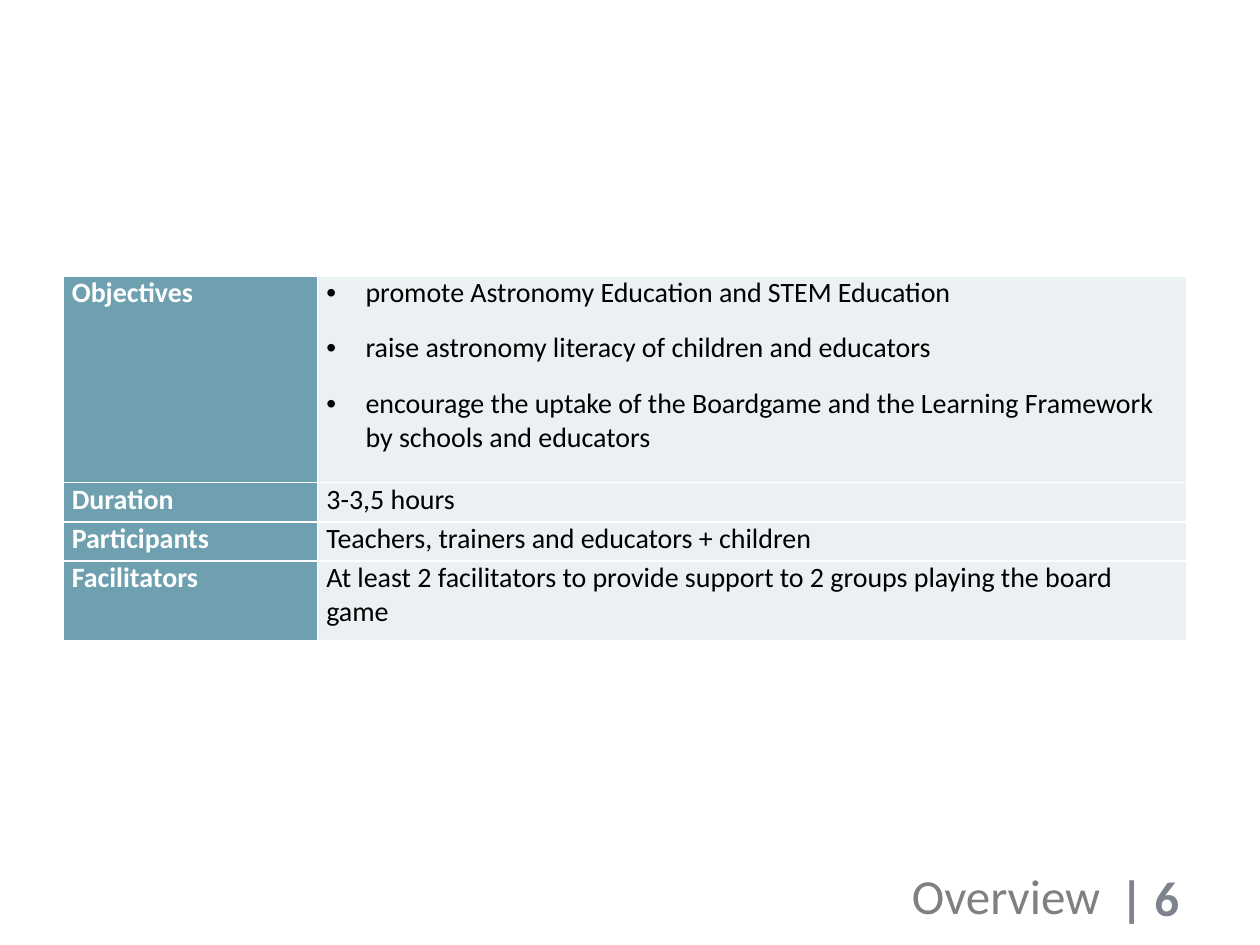
from lxml import etree
from pptx import Presentation, util as u
from pptx.dml.color import RGBColor
from pptx.enum import text
from pptx.oxml.ns import qn

WHITE = RGBColor(0xFF, 0xFF, 0xFF)
BLACK = RGBColor(0, 0, 0)
TEAL = RGBColor(0x6E, 0xA0, 0xB0)
PALE = RGBColor(0xEB, 0xF0, 0xF2)
GREY = RGBColor(0x80, 0x80, 0x80)
SLATE = RGBColor(0x7E, 0x84, 0x8D)

# label, lines, bulleted, row height in cm
ROWS = [
    ("Objectives", ["promote Astronomy Education and STEM Education",
                    "raise astronomy literacy of children and educators",
                    "encourage the uptake of the Boardgame and the Learning "
                    "Framework by schools and educators"], True, 4.17),
    ("Duration", ["3-3,5 hours"], False, 0.79),
    ("Participants", ["Teachers, trainers and educators + children"], False, 0.79),
    ("Facilitators", ["At least 2 facilitators to provide support to 2 groups "
                      "playing the board game"], False, 1.6),
]
COLS = [5.13, 17.53]
LEFT, TOP = 1.27, 5.56
INDENT = 0.79

# words, box in cm, alignment, wrap, format
FOOTER = [
    ("| 6", (22.33, 17.37, 2.87, 1.45), text.PP_ALIGN.LEFT, False,
     {"bold": True, "color": SLATE}),
    ("Overview", (0.84, 17.32, 21.59, 1.45), text.PP_ALIGN.RIGHT, True,
     {"bold": False, "color": GREY}),
]


def add_run(p, words, size, bold, color):
    r = p.add_run()
    r.text = words
    for name, value in {"name": "Calibri", "size": u.Pt(size), "bold": bold}.items():
        setattr(r.font, name, value)
    r.font.color.rgb = color


def add_bullet(p):
    pPr = p._p.get_or_add_pPr()
    pPr.set("marL", str(u.Cm(INDENT)))
    pPr.set("indent", str(-u.Cm(INDENT)))
    etree.SubElement(pPr, qn("a:buFont"), typeface="Arial")
    etree.SubElement(pPr, qn("a:buChar"), char="•")


def add_borders(cell):
    tcPr = cell._tc.get_or_add_tcPr()
    for side in "LRTB":
        ln = etree.SubElement(tcPr, qn(f"a:ln{side}"), w=str(u.Pt(1)))
        fill = etree.SubElement(ln, qn("a:solidFill"))
        etree.SubElement(fill, qn("a:srgbClr"), val=str(WHITE))


def fill_cell(cell, lines, bulleted, bold, color, back):
    margins = {"margin_left": u.Cm(0.18), "margin_right": u.Cm(0.18),
               "margin_top": 0, "margin_bottom": 0}
    for name, value in margins.items():
        setattr(cell, name, value)
    add_borders(cell)
    cell.fill.solid()
    cell.fill.fore_color.rgb = back
    tf = cell.text_frame
    for i, line in enumerate(lines):
        p = tf.add_paragraph() if i else tf.paragraphs[0]
        p.space_before = p.space_after = u.Pt(6)
        if bulleted:
            add_bullet(p)
        add_run(p, line, 16, bold, color)


def main():
    prs = Presentation()
    prs.slide_width, prs.slide_height = u.Cm(25.4), u.Cm(19.05)
    s = prs.slides.add_slide(prs.slide_layouts[6])

    for words, box, align, wrap, fmt in FOOTER:
        tf = s.shapes.add_textbox(*map(u.Cm, box)).text_frame
        tf.word_wrap = wrap
        p = tf.paragraphs[0]
        p.alignment = align
        add_run(p, words, 28, **fmt)

    height = sum(row[-1] for row in ROWS)
    table = s.shapes.add_table(len(ROWS), len(COLS), u.Cm(LEFT), u.Cm(TOP),
                               u.Cm(sum(COLS)), u.Cm(height)).table
    table.first_row = table.horz_banding = False
    for column, width in zip(table.columns, COLS):
        column.width = u.Cm(width)
    for row, (label, lines, bulleted, row_height) in zip(table.rows, ROWS):
        row.height = u.Cm(row_height)
        fill_cell(row.cells[0], [label], False, True, WHITE, TEAL)
        fill_cell(row.cells[1], lines, bulleted, False, BLACK, PALE)

    prs.save("out.pptx")


if __name__ == "__main__":
    main()
